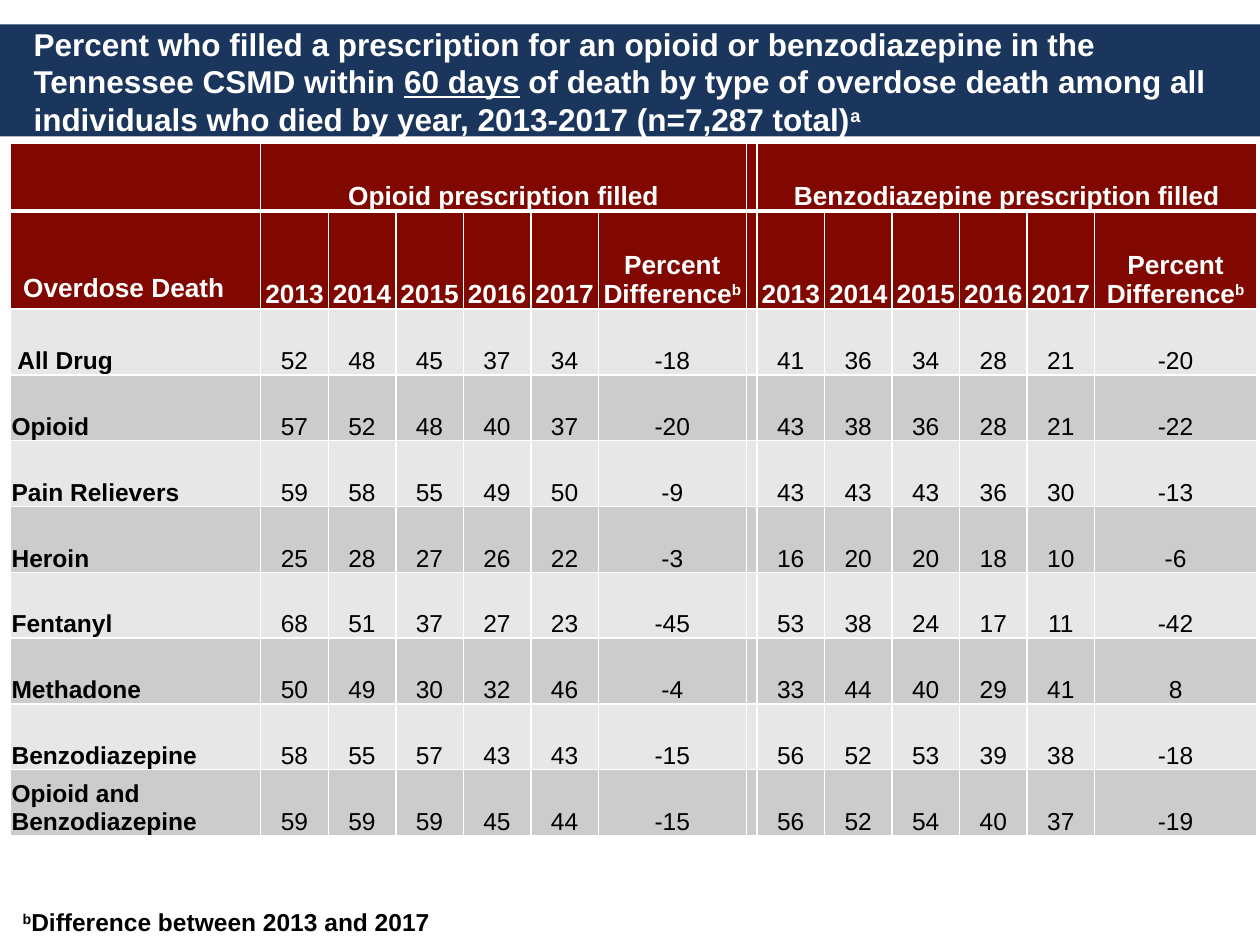
from dataclasses import dataclass

from lxml import etree
from pptx import Presentation
from pptx.dml.color import RGBColor
from pptx.enum.shapes import MSO_SHAPE
from pptx.enum.text import MSO_ANCHOR, MSO_AUTO_SIZE, PP_ALIGN
from pptx.oxml.ns import qn
from pptx.util import Pt

RECT = MSO_SHAPE.RECTANGLE
MIDDLE, BOTTOM = MSO_ANCHOR.MIDDLE, MSO_ANCHOR.BOTTOM
LEFT, CENTER = PP_ALIGN.LEFT, PP_ALIGN.CENTER
NO_FIT, GROW = MSO_AUTO_SIZE.NONE, MSO_AUTO_SIZE.SHAPE_TO_FIT_TEXT

FONT = "Arial"
HUES = {"navy": "1B365D", "red": "800800", "pale": "E7E7E7",
        "gray": "CCCCCC", "white": "FFFFFF", "black": "000000"}


@dataclass
class Part:
    """A stretch of text, optionally raised or underlined."""
    text: str
    high: bool = False
    line: bool = False


@dataclass
class Look:
    """Type size, colour and weight of a paragraph."""
    size: float
    hue: str
    bold: bool = True
    align: PP_ALIGN = LEFT


@dataclass
class Death:
    """One table row: opioid and benzodiazepine figures by year and change."""
    name: str
    opi: list[int]
    ben: list[int]


YEARS = ["2013", "2014", "2015", "2016", "2017"]
DEATHS = [
    Death(" All Drug", [52, 48, 45, 37, 34, -18], [41, 36, 34, 28, 21, -20]),
    Death("Opioid", [57, 52, 48, 40, 37, -20], [43, 38, 36, 28, 21, -22]),
    Death("Pain Relievers", [59, 58, 55, 49, 50, -9], [43, 43, 43, 36, 30, -13]),
    Death("Heroin", [25, 28, 27, 26, 22, -3], [16, 20, 20, 18, 10, -6]),
    Death("Fentanyl", [68, 51, 37, 27, 23, -45], [53, 38, 24, 17, 11, -42]),
    Death("Methadone", [50, 49, 30, 32, 46, -4], [33, 44, 40, 29, 41, 8]),
    Death("Benzodiazepine", [58, 55, 57, 43, 43, -15], [56, 52, 53, 39, 38, -18]),
    Death("Opioid and Benzodiazepine",
          [59, 59, 59, 45, 44, -15], [56, 52, 54, 40, 37, -19]),
]
WIDE = [143] + [38.6] * 5 + [84.6, 6.1] + [38.6] * 5 + [92.6]
HIGH = [38.5, 56.2] + [37.6] * len(DEATHS)
OPI, GAP, BEN = 1, 7, 8  # first columns of the blocks and the divider

HEAD = Look(15, "white", align=CENTER)
SIDE = Look(15, "white")
NAME = Look(14, "black")
DATA = Look(14, "black", bold=False, align=CENTER)


def rgb(hue: str) -> RGBColor:
    return RGBColor.from_string(HUES[hue])


def write(frame, parts: list[Part], look: Look) -> None:
    para = frame.paragraphs[0]
    para.alignment = look.align
    for part in parts:
        run = para.add_run()
        run.text = part.text
        font = run.font
        font.name, font.size, font.bold = FONT, Pt(look.size), look.bold
        font.color.rgb = rgb(look.hue)
        if part.line:
            font.underline = True
        if part.high:
            run._r.get_or_add_rPr().set("baseline", "30000")


def edge(cell, side: str, width: float) -> None:
    line = etree.SubElement(cell._tc.get_or_add_tcPr(), qn(f"a:ln{side}"),
                            w=str(Pt(width)))
    fill = etree.SubElement(line, qn("a:solidFill"))
    etree.SubElement(fill, qn("a:srgbClr"), val=HUES["white"])


def dress(cell, row: int) -> None:
    """Give a cell its borders, fill, insets and anchor."""
    thick = {("B", 0): 3, ("T", 1): 3}
    for side in "LRTB":
        edge(cell, side, thick.get((side, row), 1))
    cell.fill.solid()
    cell.fill.fore_color.rgb = rgb("red" if row < 2 else ("pale", "gray")[row % 2])
    cell.margin_left = cell.margin_right = cell.margin_top = Pt(0.6)
    cell.margin_bottom = 0
    cell.vertical_anchor = BOTTOM


def add_band(slide) -> None:
    band = slide.shapes.add_shape(RECT, 0, Pt(14), Pt(720), Pt(64))
    band.shadow.inherit = False
    band.fill.solid()
    band.fill.fore_color.rgb = rgb("navy")
    band.line.fill.background()
    slide.shapes.title._element.addprevious(band._element)


def add_title(slide) -> None:
    title = slide.shapes.title
    title.left, title.top = Pt(12), Pt(14)
    title.width, title.height = Pt(696), Pt(64.8)
    frame = title.text_frame
    frame.word_wrap, frame.auto_size = True, NO_FIT
    frame.vertical_anchor = MIDDLE
    write(frame, [
        Part("Percent who filled a prescription for an opioid or "
             "benzodiazepine in the Tennessee CSMD within "),
        Part("60 days", line=True),
        Part(" of death by type of overdose death among all individuals "
             "who died by year, 2013-2017 (n=7,287 total)"),
        Part("a", high=True),
    ], Look(18, "white"))


def add_note(slide) -> None:
    box = slide.shapes.add_textbox(Pt(5.8), Pt(514.8), Pt(249), Pt(24.2))
    box.text_frame.word_wrap, box.text_frame.auto_size = False, GROW
    write(box.text_frame, [Part("b", high=True),
                           Part("Difference between 2013 and 2017")], NAME)


def add_grid(slide) -> None:
    grid = slide.shapes.add_table(len(HIGH), len(WIDE), Pt(6), Pt(82),
                                  Pt(sum(WIDE)), Pt(sum(HIGH))).table
    for col, wide in zip(grid.columns, WIDE):
        col.width = Pt(wide)
    for row, high in enumerate(HIGH):
        grid.rows[row].height = Pt(high)
        for col in range(len(WIDE)):
            dress(grid.cell(row, col), row)

    # Heading rows
    side = grid.cell(1, 0)
    side.margin_left = side.margin_right = Pt(7.2)
    side.margin_top = side.margin_bottom = Pt(3.6)
    write(side.text_frame, [Part("Overdose Death")], SIDE)
    labels = [[Part(year)] for year in YEARS]
    labels.append([Part("Percent Difference"), Part("b", high=True)])
    for start, drug in ((OPI, "Opioid"), (BEN, "Benzodiazepine")):
        top = grid.cell(0, start)
        top.merge(grid.cell(0, start + len(YEARS)))
        write(top.text_frame, [Part(f"{drug} prescription filled")], HEAD)
        for col, parts in enumerate(labels, start):
            write(grid.cell(1, col).text_frame, parts, HEAD)

    # Figures
    for row, death in enumerate(DEATHS, 2):
        write(grid.cell(row, 0).text_frame, [Part(death.name)], NAME)
        for start, nums in ((OPI, death.opi), (BEN, death.ben)):
            for col, num in enumerate(nums, start):
                write(grid.cell(row, col).text_frame, [Part(str(num))], DATA)


def main() -> None:
    deck = Presentation()
    deck.slide_width, deck.slide_height = Pt(720), Pt(540)
    slide = deck.slides.add_slide(deck.slide_layouts[5])
    add_band(slide)
    add_title(slide)
    add_note(slide)
    add_grid(slide)
    deck.save("out.pptx")


if __name__ == "__main__":
    main()
